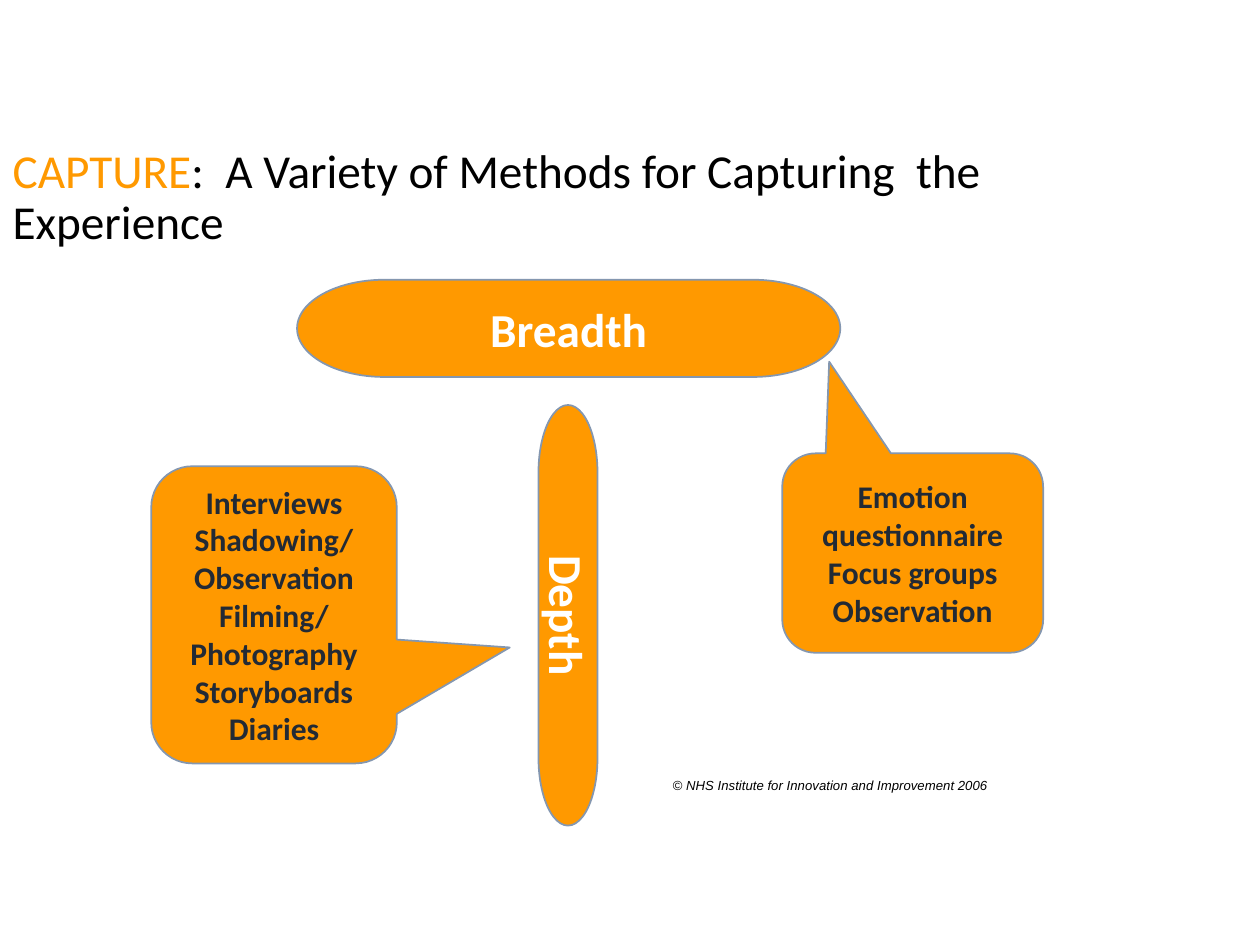
from pptx import Presentation
from pptx.dml.color import RGBColor
from pptx.enum.shapes import MSO_SHAPE
from pptx.enum.text import MSO_ANCHOR, MSO_AUTO_SIZE, PP_ALIGN
from pptx.util import Cm, Pt

PILL = MSO_SHAPE.FLOWCHART_TERMINATOR
CALLOUT = MSO_SHAPE.ROUNDED_RECTANGULAR_CALLOUT
MIDDLE = MSO_ANCHOR.MIDDLE
FIXED_SIZE = MSO_AUTO_SIZE.NONE
LEFT, CENTER = PP_ALIGN.LEFT, PP_ALIGN.CENTER
COLORS = {"orange": "FF9900", "outline": "8497B0", "dark": "222A35",
          "white": "FFFFFF", "black": "000000"}


def color(name):
    return RGBColor.from_string(COLORS[name])


def add_text(para, text, size=18, ink="black", font="Calibri",
             bold=False, italic=False, align=CENTER):
    para.alignment = align
    span = para.add_run()
    span.text = text
    span.font.name = font
    span.font.size = Pt(size)
    span.font.bold = bold
    span.font.italic = italic
    span.font.color.rgb = color(ink)


deck = Presentation()
deck.slide_width, deck.slide_height = Cm(25.4), Cm(19.05)
page = deck.slides.add_slide(deck.slide_layouts[5])

# Title
title = page.shapes.title
title.left, title.top, title.width, title.height = Cm(0), Cm(2.39), Cm(24.46), Cm(3.23)
title.fill.solid()
title.fill.fore_color.rgb = color("white")
frame = title.text_frame
frame.auto_size = FIXED_SIZE
frame.vertical_anchor = MIDDLE
frame.margin_right = Cm(0.6)
heading = frame.paragraphs[0]
heading.line_spacing = 0.9
add_text(heading, "CAPTURE", size=27, ink="orange", align=LEFT)
add_text(heading, ":  A Variety of Methods for Capturing  the Experience", size=27, align=LEFT)

# Breadth and depth bars, each with a callout listing its methods
# kind, (left, top, width, height), rotation, callout tip, size, ink, lines
shapes = [
    (PILL, (5.99, 5.64, 10.95, 1.96), 0, None, 27, "white", ["Breadth"]),
    (PILL, (7.21, 11.81, 8.48, 1.19), 90, None, 27, "white", ["Depth"]),
    (CALLOUT, (3.05, 9.4, 4.95, 5.99), 0, (0.96, 0.11), 18, "dark",
     ["Interviews Shadowing/", "Observation Filming/", "Photography",
      "Storyboards", "Diaries"]),
    (CALLOUT, (15.77, 9.14, 5.26, 4.02), 0, (-0.32, -0.96), 18, "dark",
     ["Emotion questionnaire", "Focus groups", "Observation"]),
]
for kind, place, rotation, tip, size, ink, lines in shapes:
    box = page.shapes.add_shape(kind, *[Cm(length) for length in place])
    box.rotation = rotation
    box.shadow.inherit = False
    box.fill.solid()
    box.fill.fore_color.rgb = color("orange")
    box.line.color.rgb = color("outline")
    box.line.width = Pt(1)
    if tip:
        box.adjustments[0], box.adjustments[1] = tip
    frame = box.text_frame
    frame.word_wrap = True
    frame.vertical_anchor = MIDDLE
    for index, line in enumerate(lines):
        para = frame.add_paragraph() if index else frame.paragraphs[0]
        add_text(para, line, size=size, ink=ink, bold=True)

# Copyright line
credit = page.shapes.add_textbox(Cm(13.31), Cm(15.54), Cm(6.86), Cm(0.58))
frame = credit.text_frame
frame.word_wrap = True
frame.auto_size = FIXED_SIZE
frame.vertical_anchor = MIDDLE
add_text(frame.paragraphs[0], "© NHS Institute for Innovation and Improvement 2006",
         size=7.5, font="Arial", italic=True, align=LEFT)

deck.save("out.pptx")
